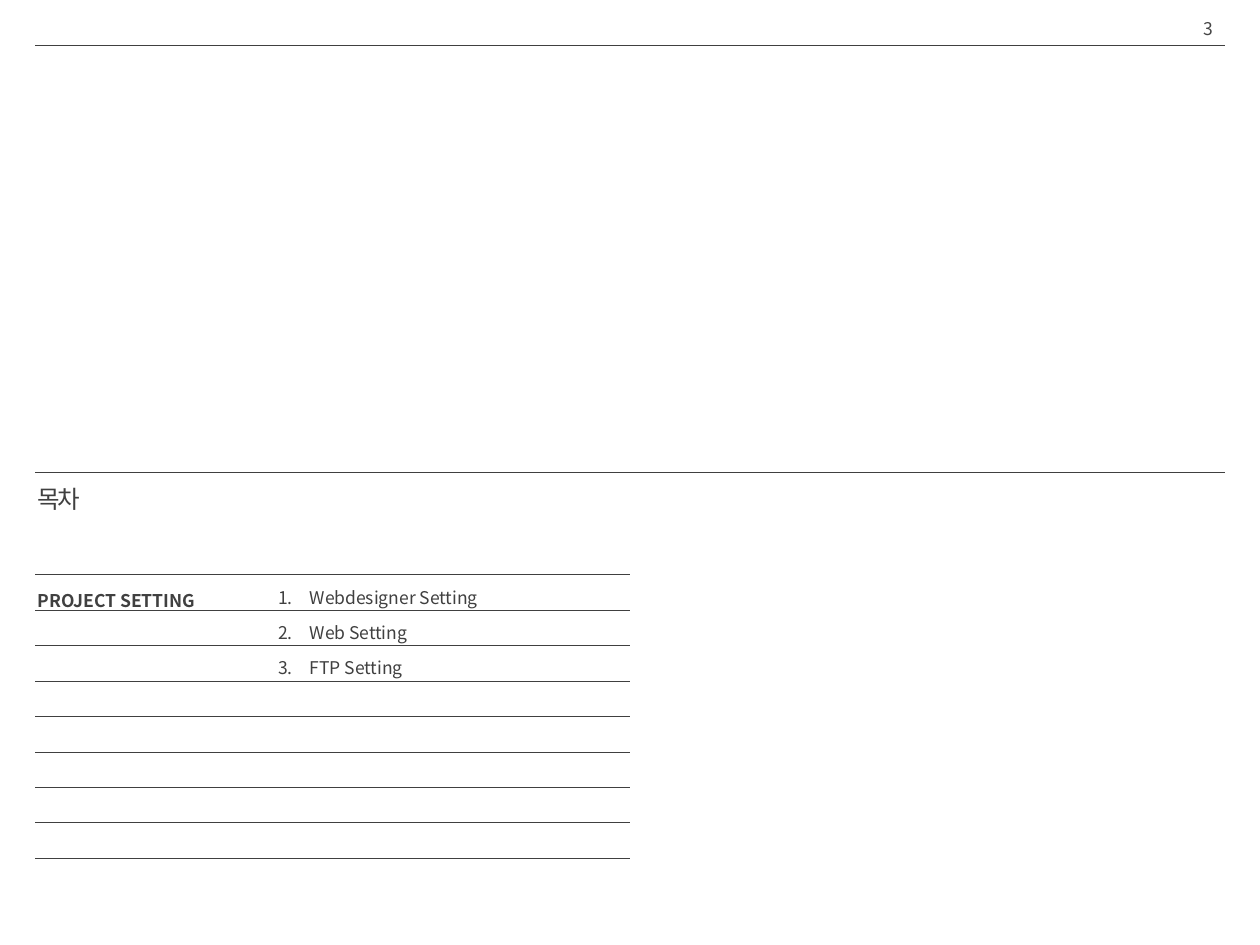
from lxml import etree
from pptx import Presentation
from pptx import util as u
from pptx.dml.color import RGBColor
from pptx.enum import shapes, text
from pptx.oxml import ns

INK = RGBColor(0x40, 0x40, 0x40)
PAGE_NUMBER_INK = RGBColor(0x46, 0x46, 0x46)
FONT = "Noto Sans CJK KR"

MARGIN = 0.28
PAGE_WIDTH, PAGE_HEIGHT = 10, 7.5
ROWS_TOP, ROWS_BOTTOM, ROW_COUNT = 4.56, 6.81, 8
ROW_HEIGHT = (ROWS_BOTTOM - ROWS_TOP) / ROW_COUNT

deck = Presentation()
deck.slide_width = u.Inches(PAGE_WIDTH)
deck.slide_height = u.Inches(PAGE_HEIGHT)
page = deck.slides.add_slide(deck.slide_layouts[6])


def add_rule(right, y):
    """Draw a hairline from the left margin."""
    rule = page.shapes.add_connector(
        shapes.MSO_CONNECTOR.STRAIGHT,
        u.Inches(MARGIN), u.Inches(y), u.Inches(right), u.Inches(y))
    rule.line.color.rgb = INK
    rule.line.width = u.Pt(0.25)
    etree.SubElement(rule._element.spPr, ns.qn("a:effectLst"))


def add_text(place, lines, size=10, color=INK, bold=False, spacing=u.Pt(20)):
    box = page.shapes.add_textbox(*[u.Inches(length) for length in place])
    frame = box.text_frame
    frame.word_wrap = True
    frame.text = "\n".join(lines)
    for para in frame.paragraphs:
        para.line_spacing = spacing
        for span in para.runs:
            span.font.name = FONT
            span.font.size = u.Pt(size)
            span.font.bold = bold
            span.font.color.rgb = color
            east_asian = etree.SubElement(span.font._element, ns.qn("a:ea"))
            east_asian.set("typeface", FONT)
    return frame


for y in (0.36, PAGE_HEIGHT / 2):
    add_rule(PAGE_WIDTH - MARGIN, y)

number = add_text((7.79, 0.08, 1.94, 0.29), ["3"],
                  color=PAGE_NUMBER_INK, spacing=1.0)
number.vertical_anchor = text.MSO_ANCHOR.MIDDLE
number.paragraphs[0].alignment = text.PP_ALIGN.RIGHT

title = add_text((0.2, 3.83, 1.42, 0.3), ["목차"], size=14, spacing=0.85)
title.paragraphs[0].runs[0].font._element.set("spc", "-150")

add_text((0.2, 4.52, 1.81, 0.34), ["PROJECT SETTING"], bold=True)

contents = add_text((2.11, 4.5, 2.18, 0.94),
                    ["Webdesigner Setting", "Web Setting", "FTP Setting"])
for para in contents.paragraphs:
    properties = para._p.get_or_add_pPr()
    properties.set("marL", str(u.Inches(0.25)))
    properties.set("indent", str(-u.Inches(0.25)))
    numbering = etree.SubElement(properties, ns.qn("a:buAutoNum"))
    numbering.set("type", "arabicPeriod")

for row in range(ROW_COUNT + 1):
    add_rule(PAGE_WIDTH / 2, ROWS_TOP + row * ROW_HEIGHT)

deck.save("out.pptx")
